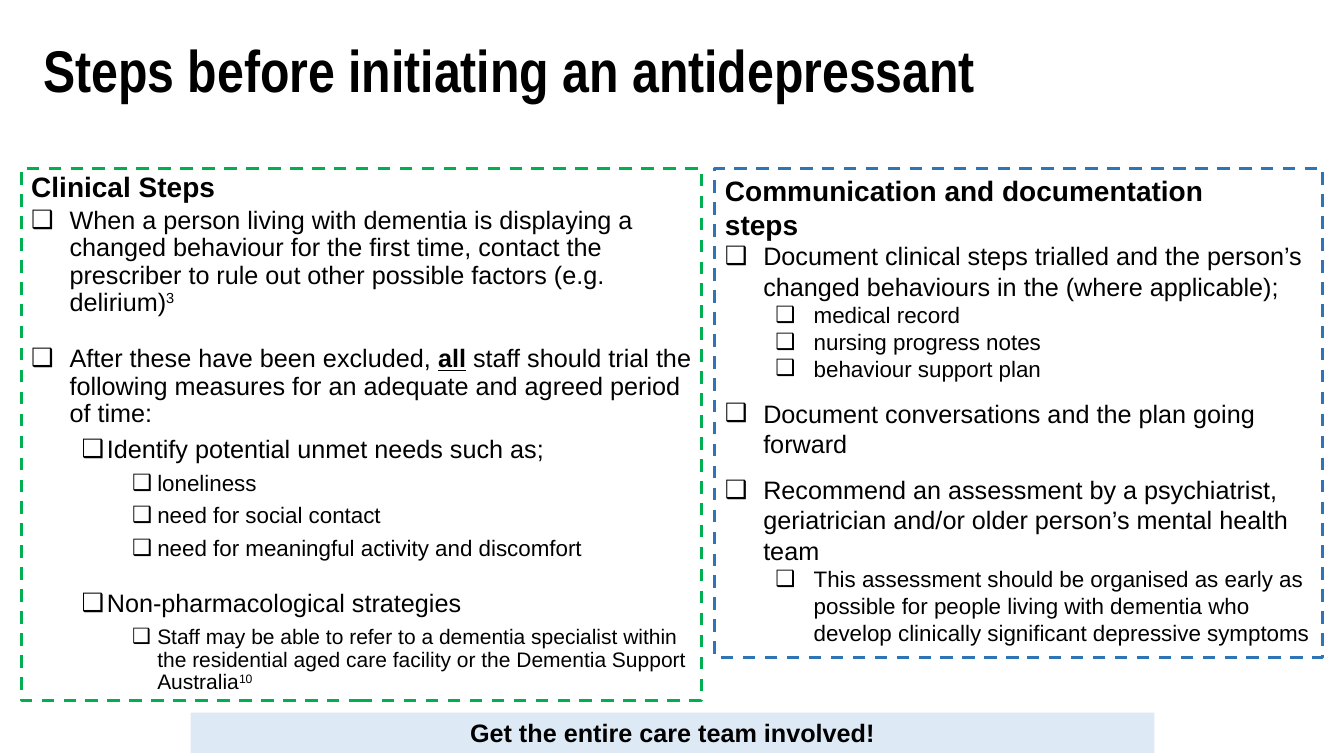
from dataclasses import dataclass

from lxml import etree
from pptx import Presentation
from pptx.dml.color import RGBColor
from pptx.enum.dml import MSO_LINE
from pptx.enum.text import MSO_ANCHOR, MSO_AUTO_SIZE, PP_ALIGN
from pptx.oxml.ns import qn
from pptx.util import Inches, Pt

DASH = MSO_LINE.DASH
TOP = MSO_ANCHOR.TOP
FIXED = MSO_AUTO_SIZE.NONE
LEFT, CENTER = PP_ALIGN.LEFT, PP_ALIGN.CENTER


@dataclass(frozen=True)
class Theme:
    ink: str = "000000"
    green: str = "00B050"
    blue: str = "2E75B5"
    pale: str = "DDEAF6"
    font: str = "Arial"
    narrow: str = "Arial Narrow"
    title: float = 42
    head: float = 20
    body: float = 18
    small: float = 16
    note: float = 15
    edge: float = 2.25
    tight: float = 0.9


@dataclass(frozen=True)
class Step:
    """One paragraph; text is a string or a list of (words, mark) pairs."""
    text: str | list
    size: float
    level: int = 0
    left: float = 0
    hang: float = 0
    before: float = 0
    bold: bool = False


class Deck:
    def __init__(self, theme):
        self.theme = theme
        self.prs = Presentation()
        self.prs.slide_width = Inches(13.33)
        self.prs.slide_height = Inches(7.5)
        self.slide = self.prs.slides.add_slide(self.prs.slide_layouts[3])

    def place(self, shape, box):
        shape.left, shape.top, shape.width, shape.height = map(Inches, box)
        frame = shape.text_frame
        frame.word_wrap = True
        frame.auto_size = FIXED
        frame.vertical_anchor = TOP
        return frame

    def style(self, run, size, bold, font=None):
        run.font.name = font or self.theme.font
        run.font.size = Pt(size)
        run.font.bold = bold
        run.font.color.rgb = RGBColor.from_string(self.theme.ink)

    def bullet(self, para, step):
        props = para._p.get_or_add_pPr()
        props.set("marL", str(Inches(step.left)))
        props.set("indent", str(Inches(-step.hang)))
        if not step.hang:
            etree.SubElement(props, qn("a:buNone"))
            return
        color = etree.SubElement(props, qn("a:buClr"))
        etree.SubElement(color, qn("a:srgbClr"), val=self.theme.ink)
        etree.SubElement(props, qn("a:buFont"), typeface=self.theme.font)
        etree.SubElement(props, qn("a:buChar"), char="❑")

    def title(self, text, box):
        frame = self.place(self.slide.shapes.title, box)
        frame.text = text
        para = frame.paragraphs[0]
        para.alignment = LEFT
        para.line_spacing = self.theme.tight
        self.style(para.runs[0], self.theme.title, True, self.theme.narrow)

    def panel(self, slot, box, color, steps, spacing):
        shape = self.slide.placeholders[slot]
        frame = self.place(shape, box)
        shape.line.color.rgb = RGBColor.from_string(color)
        shape.line.width = Pt(self.theme.edge)
        shape.line.dash_style = DASH
        for i, step in enumerate(steps):
            para = frame.add_paragraph() if i else frame.paragraphs[0]
            self.fill_para(para, step, spacing)

    def fill_para(self, para, step, spacing):
        parts = [(step.text, "")] if isinstance(step.text, str) else step.text
        para.level = step.level
        self.bullet(para, step)
        para.line_spacing = spacing
        para.space_before = Pt(step.before)
        for words, mark in parts:
            run = para.add_run()
            run.text = words
            self.style(run, step.size, step.bold or mark == "strong")
            if mark == "strong":
                run.font.underline = True
            elif mark == "super":
                run._r.get_or_add_rPr().set("baseline", "30000")

    def banner(self, text, box):
        shape = self.slide.shapes.add_textbox(*map(Inches, box))
        frame = self.place(shape, box)
        shape.fill.solid()
        shape.fill.fore_color.rgb = RGBColor.from_string(self.theme.pale)
        frame.text = text
        para = frame.paragraphs[0]
        para.alignment = CENTER
        self.style(para.runs[0], self.theme.body, True)


def main():
    theme = Theme()
    deck = Deck(theme)

    # Kinds of paragraph
    def head(text):
        return Step(text, theme.head, bold=True)

    def main_step(text, before=0):
        return Step(text, theme.body, 0, 0.38, 0.38, before)

    def sub(text, before=6):
        return Step(text, theme.body, 1, 0.75, 0.25, before)

    def leaf(text, size=theme.small):
        return Step(text, size, 2, 1.25, 0.25, 6)

    def item(text):
        return Step(text, theme.small, 1, 0.88, 0.38)

    # Title
    deck.title("Steps before initiating an antidepressant",
               (0.33, 0.36, 11.78, 0.81))

    # Clinical steps
    deck.panel(1, (0.21, 1.67, 6.75, 5.28), theme.green, [
        head("Clinical Steps"),
        main_step([("When a person living with dementia is displaying a "
                    "changed behaviour for the first time, contact the "
                    "prescriber to rule out other possible factors "
                    "(e.g. delirium)", ""), ("3", "super")], 3),
        main_step([("After these have been excluded, ", ""),
                   ("all", "strong"),
                   (" staff should trial the following measures for an "
                    "adequate and agreed period of time:", "")], 21),
        sub("Identify potential unmet needs such as;"),
        leaf("loneliness"),
        leaf("need for social contact"),
        leaf("need for meaningful activity and discomfort"),
        sub("Non-pharmacological strategies", 21),
        leaf([("Staff may be able to refer to a dementia specialist within "
               "the residential aged care facility or the Dementia Support "
               "Australia", ""), ("10", "super")], theme.note),
    ], theme.tight)

    # Communication and documentation steps
    deck.panel(2, (7.09, 1.67, 6.03, 4.85), theme.blue, [
        head("Communication and documentation"),
        head("steps"),
        main_step("Document clinical steps trialled and the person’s changed "
                  "behaviours in the (where applicable);"),
        item("medical record"),
        item("nursing progress notes"),
        item("behaviour support plan"),
        main_step("Document conversations and the plan going forward", 11.5),
        main_step("Recommend an assessment by a psychiatrist, geriatrician "
                  "and/or older person’s mental health team", 11.5),
        item("This assessment should be organised as early as possible for "
             "people living with dementia who develop clinically significant "
             "depressive symptoms"),
    ], 1.0)

    # Closing message
    deck.banner("Get the entire care team involved!", (1.89, 7.07, 9.56, 0.4))

    deck.prs.save("out.pptx")


if __name__ == "__main__":
    main()
